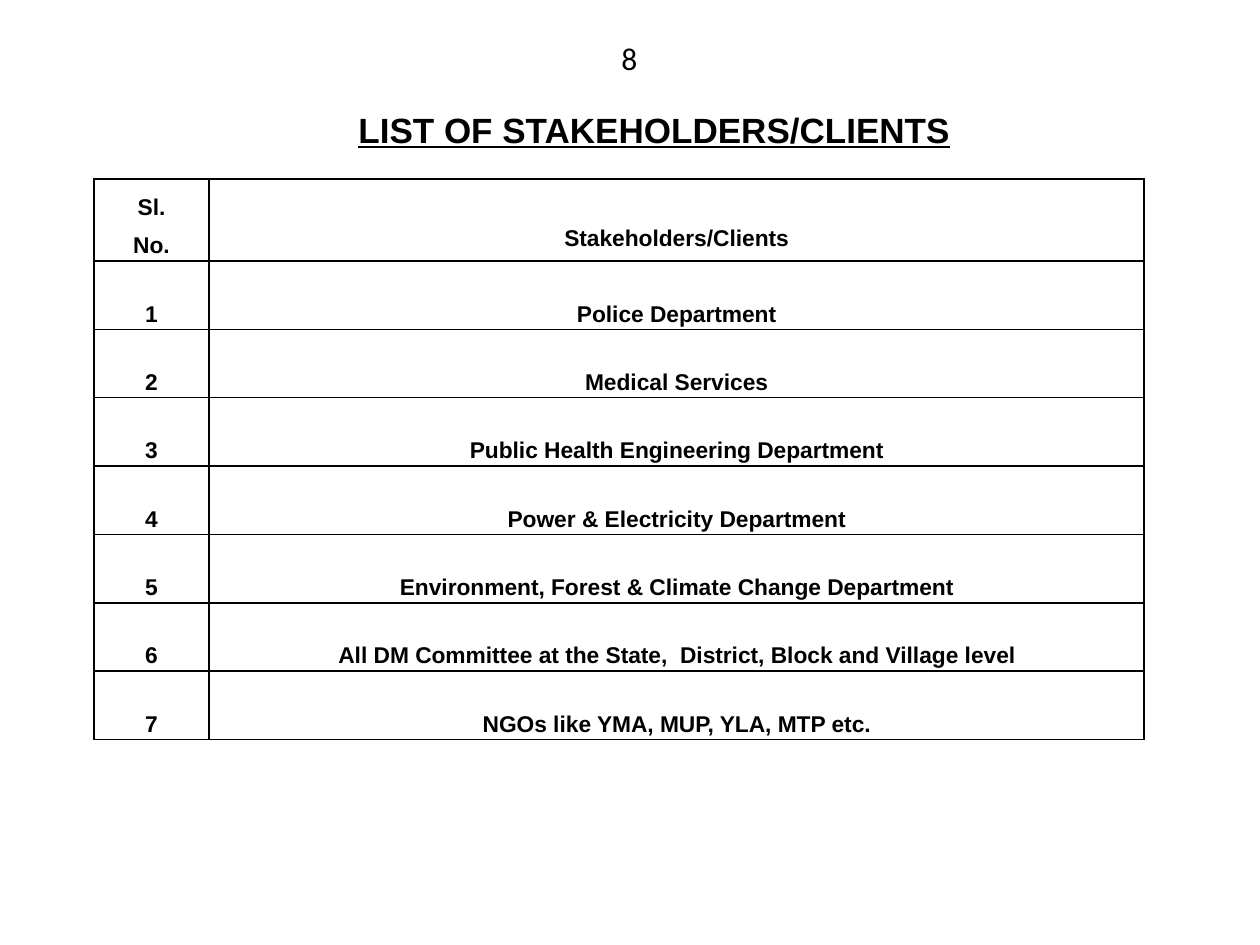
from typing import NamedTuple

from lxml.etree import SubElement
from pptx import Presentation
from pptx.dml.color import RGBColor as RGB
from pptx.enum.text import MSO_ANCHOR as ANCHOR, MSO_AUTO_SIZE as AUTOSIZE, PP_ALIGN as ALIGN
from pptx.oxml.ns import qn
from pptx.util import Emu, Pt

PX = 914400 / 126
COLORS = {"ink": "000000"}


class Label(NamedTuple):
    text: str
    x: int
    y: int
    w: int
    h: int
    font: str
    size: int
    anchor: ANCHOR
    heading: bool


class Entry(NamedTuple):
    lines: tuple[str, ...]
    spacing: float


TITLE = Label("LIST OF STAKEHOLDERS/CLIENTS", 346, 102, 622, 55,
              "Arial", 20, ANCHOR.MIDDLE, True)
PAGE_NUMBER = Label("8", 609, 33, 42, 50, "Calibri", 18, ANCHOR.TOP, False)
STAKEHOLDERS = [
    "Police Department",
    "Medical Services",
    "Public Health Engineering Department",
    "Power & Electricity Department",
    "Environment, Forest & Climate Change Department",
    "All DM Committee at the State,  District, Block and Village level",
    "NGOs like YMA, MUP, YLA, MTP etc.",
]
COL_WIDTHS = (115, 935)
HEADER_H, BODY_H = 82, 478


def px(n: int) -> Emu:
    return Emu(round(n * PX))


def add_run(p, text: str, font: str, size: int, bold: bool) -> None:
    r = p.add_run()
    r.text = text
    r.font.name, r.font.size, r.font.bold = font, Pt(size), bold
    r.font.color.rgb = RGB.from_string(COLORS["ink"])


def add_label(s, label: Label) -> None:
    box = s.shapes.add_textbox(px(label.x), px(label.y), px(label.w), px(label.h))
    tf = box.text_frame
    tf.word_wrap = False
    tf.auto_size = AUTOSIZE.SHAPE_TO_FIT_TEXT
    tf.vertical_anchor = label.anchor
    p = tf.paragraphs[0]
    add_run(p, label.text, label.font, label.size, label.heading)
    p.runs[0].font.underline = label.heading


def add_borders(cell) -> None:
    """Rule all four sides; the lines must precede the fill in tcPr."""
    tc_pr = cell._tc.get_or_add_tcPr()
    for i, side in enumerate(("lnL", "lnR", "lnT", "lnB")):
        ln = SubElement(tc_pr, qn(f"a:{side}"), w=str(Pt(1)))
        fill = SubElement(ln, qn("a:solidFill"))
        SubElement(fill, qn("a:srgbClr"), val=COLORS["ink"])
        tc_pr.insert(i, ln)


def fill_cell(cell, entry: Entry) -> None:
    cell.fill.background()
    add_borders(cell)
    cell.vertical_anchor = ANCHOR.MIDDLE
    cell.margin_left = cell.margin_right = px(9)
    cell.margin_top = cell.margin_bottom = 0
    tf = cell.text_frame
    for i, line in enumerate(entry.lines):
        p = tf.add_paragraph() if i else tf.paragraphs[0]
        p.alignment = ALIGN.CENTER
        p.line_spacing = entry.spacing
        add_run(p, line, "Arial", 13, True)


def add_stakeholder_table(s, x: int, y: int) -> None:
    rows = [(Entry(("Sl.", "No."), 1.5), Entry(("Stakeholders/Clients",), 2.5))]
    rows += [(Entry((str(n),), 2.5), Entry((name,), 2.5))
             for n, name in enumerate(STAKEHOLDERS, 1)]
    table = s.shapes.add_table(len(rows), len(COL_WIDTHS), px(x), px(y),
                               px(sum(COL_WIDTHS)), px(HEADER_H + BODY_H)).table
    table.first_row = table.horz_banding = False
    for col, width in zip(table.columns, COL_WIDTHS):
        col.width = px(width)
    for i, entries in enumerate(rows):
        table.rows[i].height = Emu(px(BODY_H) // len(STAKEHOLDERS)) if i else px(HEADER_H)
        for j, entry in enumerate(entries):
            fill_cell(table.cell(i, j), entry)


def main() -> None:
    prs = Presentation()
    prs.slide_width, prs.slide_height = px(1260), px(945)
    s = prs.slides.add_slide(prs.slide_layouts[6])
    add_label(s, TITLE)
    add_stakeholder_table(s, 94, 179)
    add_label(s, PAGE_NUMBER)
    prs.save("out.pptx")


if __name__ == "__main__":
    main()
